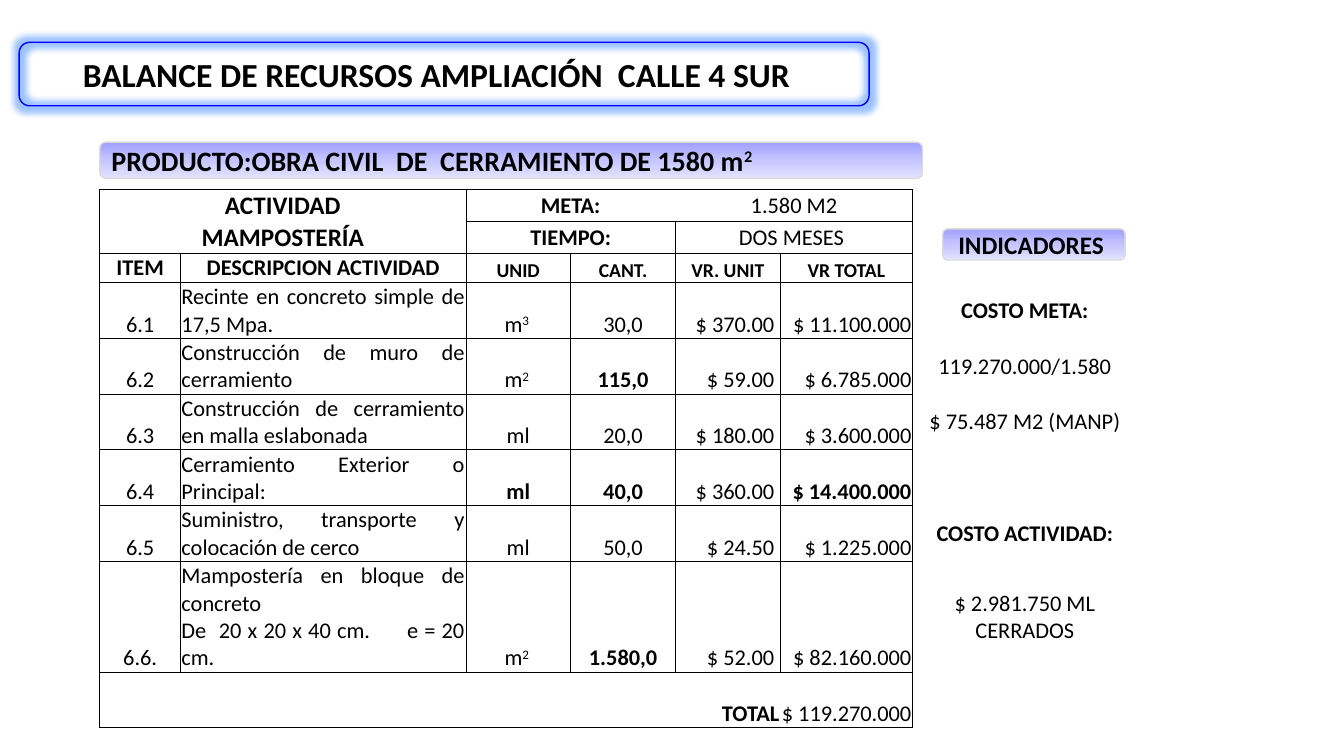
"""Build the resource balance slide with its cost table and indicators."""
import copy
import dataclasses
import typing

import lxml.etree
import pptx
import pptx.dml.color
import pptx.enum.shapes
import pptx.enum.text
import pptx.oxml
import pptx.oxml.ns
import pptx.util

Inches = pptx.util.Inches
Align = pptx.enum.text.PP_ALIGN
Anchor = pptx.enum.text.MSO_ANCHOR
qn = pptx.oxml.ns.qn

COLORS = {"text": "000000", "frame": "0000FF", "glow": "5B9BFF", "banner_line": "DBDBDB",
          "banner_top": "A0A0FF", "banner_middle": "C5C5FF", "banner_bottom": "E3E3FF"}
FONT = "Calibri"
TITLE_BOX = (0.19, 0.42, 8.43, 0.63)
COLUMN_WIDTHS = (0.8, 2.83, 1.04, 1.04, 1.04, 1.31, 2.23)
ROW_HEIGHTS = (0.3, 0.3, 0.29, 0.44, 0.39, 0.4, 0.54, 0.4, 0.55, 0.55)
LAST_ROW = len(ROW_HEIGHTS) - 1
INDICATOR_COLUMN = 6
FIRST_ITEM_ROW = 3


@dataclasses.dataclass
class Cell:
    """Content and format of one table cell."""
    row: int
    column: int
    text: str
    bold: bool = False
    size: float = 16
    align: Align = Align.CENTER
    anchor: Anchor = Anchor.BOTTOM
    superscript: str = ""
    span: int = 1
    open_sides: str = ""


@dataclasses.dataclass
class Item:
    """One priced activity of the budget."""
    number: str
    description: str
    unit: str
    exponent: str
    quantity: str
    unit_price: str
    total: str
    bold_columns: tuple[int, ...] = ()


@dataclasses.dataclass
class Banner:
    """A gradient label."""
    box: tuple[float, float, float, float]
    text: str
    size: float
    align: Align
    superscript: str = ""


BANNERS = (
    Banner((0.99, 1.41, 8.16, 0.36), "PRODUCTO:OBRA CIVIL  DE  CERRAMIENTO DE 1580 m", 20, Align.LEFT, "2"),
    Banner((9.35, 2.27, 1.81, 0.31), "INDICADORES ", 18, Align.CENTER),
)
ITEMS = (
    Item("6.1", "Recinte en concreto simple de 17,5 Mpa. ", "m", "3 ", "30,0", "$ 370.00 ", "$ 11.100.000"),
    Item("6.2", "Construcción de muro de cerramiento ", "m", "2 ", "115,0", "$ 59.00 ", "$ 6.785.000", (3,)),
    Item("6.3", "Construcción de cerramiento en malla eslabonada", "ml", "", "20,0", "$ 180.00 ", "$ 3.600.000"),
    Item("6.4", "Cerramiento Exterior o Principal: ", "ml", "", "40,0", "$ 360.00 ", "$ 14.400.000", (2, 3, 5)),
    Item("6.5", "Suministro, transporte y colocación de cerco ", "ml", "", "50,0", "$ 24.50 ", "$ 1.225.000"),
    Item("6.6.", "Mampostería en bloque de concreto \nDe  20 x 20 x 40 cm.      e = 20 cm.",
         "m", "2 ", "1.580,0", "$ 52.00 ", "$ 82.160.000", (3,)),
)
HEADINGS = ("ITEM", "DESCRIPCION ACTIVIDAD", "UNID", "CANT.", "VR. UNIT", "VR TOTAL")
INDICATORS = {3: "COSTO META:", 4: "119.270.000/1.580", 5: "$ 75.487 M2 (MANP)",
              7: "COSTO ACTIVIDAD:", 8: "$ 2.981.750 ML CERRADOS"}
ITEM_ALIGNS = (Align.CENTER, Align.JUSTIFY, Align.CENTER, Align.CENTER, Align.RIGHT, Align.RIGHT)


def rgb(name: str) -> pptx.dml.color.RGBColor:
    """Return the named colour."""
    return pptx.dml.color.RGBColor.from_string(COLORS[name])


def write(frame: typing.Any, text: str, *, size: float, bold: bool = True,
          align: Align = Align.CENTER, superscript: str = "") -> None:
    """Fill a text frame, one paragraph per line, with an optional raised ending."""
    for index, line in enumerate(text.split("\n")):
        paragraph = frame.add_paragraph() if index else frame.paragraphs[0]
        paragraph.alignment = align
        for part, raised in ((line, False), (superscript, True)):
            if not part:
                continue
            run = paragraph.add_run()
            run.text = part
            run.font.name = FONT
            run.font.size = pptx.util.Pt(size)
            run.font.bold = bold
            run.font.color.rgb = rgb("text")
            if raised:
                run.font._element.set("baseline", "30000")


def add_rounded(slide: typing.Any, box: tuple[float, ...], line_color: str) -> typing.Any:
    """Add a rounded shape with a thin outline."""
    shape = slide.shapes.add_shape(
        pptx.enum.shapes.MSO_SHAPE.FLOWCHART_ALTERNATE_PROCESS, *map(Inches, box))
    shape.shadow.inherit = False
    shape.line.color.rgb = rgb(line_color)
    shape.line.width = pptx.util.Pt(1)
    return shape


def add_title(slide: typing.Any) -> None:
    """Place the title and its glowing frame."""
    frame = add_rounded(slide, TITLE_BOX, "frame")
    frame.fill.background()
    effects = frame._element.spPr.find(qn("a:effectLst"))
    glow = lxml.etree.SubElement(effects, qn("a:glow"), rad="101600")
    color = lxml.etree.SubElement(glow, qn("a:srgbClr"), val=COLORS["glow"])
    lxml.etree.SubElement(color, qn("a:alpha"), val="60000")
    title = slide.shapes.title
    title.left, title.top, title.width, title.height = map(Inches, TITLE_BOX)
    title.text_frame.auto_size = pptx.enum.text.MSO_AUTO_SIZE.NONE
    title.text_frame.vertical_anchor = Anchor.MIDDLE
    write(title.text_frame, "BALANCE DE RECURSOS AMPLIACIÓN  CALLE 4 SUR  ", size=24)


def add_banner(slide: typing.Any, banner: Banner) -> None:
    """Add a label with a three-stop vertical gradient."""
    shape = add_rounded(slide, banner.box, "banner_line")
    shape.fill.gradient()
    shape.fill.gradient_angle = 270
    stop_list = shape._element.spPr.find(".//" + qn("a:gsLst"))
    stop_list.append(copy.deepcopy(stop_list[-1]))
    names = ("banner_top", "banner_middle", "banner_bottom")
    for index, (stop, name) in enumerate(zip(shape.fill.gradient_stops, names)):
        stop.position = index / 2
        stop.color.rgb = rgb(name)
    shape.text_frame.word_wrap = True
    shape.text_frame.vertical_anchor = Anchor.MIDDLE
    write(shape.text_frame, banner.text, size=banner.size, align=banner.align,
          superscript=banner.superscript)


def build_cells() -> list[Cell]:
    """List every filled table cell."""
    cells = [
        Cell(0, 0, "ACTIVIDAD", True, 18, span=2, open_sides="B"),
        Cell(0, 2, "META:", True, anchor=Anchor.MIDDLE, span=2, open_sides="R"),
        Cell(0, 4, "1.580 M2", anchor=Anchor.MIDDLE, span=2, open_sides="L"),
        Cell(1, 0, "MAMPOSTERÍA", True, 18, anchor=Anchor.MIDDLE, span=2, open_sides="T"),
        Cell(1, 2, "TIEMPO:", True, anchor=Anchor.MIDDLE, span=2),
        Cell(1, 4, "DOS MESES ", anchor=Anchor.MIDDLE, span=2),
        Cell(LAST_ROW, 0, "TOTAL", True, align=Align.RIGHT, span=5, open_sides="R"),
        Cell(LAST_ROW, 5, "$ 119.270.000", align=Align.RIGHT, open_sides="L"),
    ]
    for column, heading in enumerate(HEADINGS):
        wide = column < 2
        cells.append(Cell(2, column, heading, True, 16 if wide else 14,
                          anchor=Anchor.MIDDLE if wide else Anchor.BOTTOM))
    for row, item in enumerate(ITEMS, FIRST_ITEM_ROW):
        texts = (item.number, item.description, item.unit, item.quantity, item.unit_price, item.total)
        for column, text in enumerate(texts):
            cells.append(Cell(row, column, text, column in item.bold_columns, align=ITEM_ALIGNS[column],
                              anchor=Anchor.MIDDLE if column == 1 else Anchor.BOTTOM,
                              superscript=item.exponent if column == 2 else ""))
    for row in range(len(ROW_HEIGHTS)):
        text = INDICATORS.get(row, "")
        cells.append(Cell(row, INDICATOR_COLUMN, text, text.startswith("COSTO"),
                          anchor=Anchor.MIDDLE, open_sides="RTB"))
    return cells


def set_borders(table_cell: typing.Any, cell: Cell, column: int) -> None:
    """Draw the sides of a grid cell, heavier around the budget, and clear its fill."""
    last = cell.column + cell.span - 1
    heavy = {"L": cell.column in (0, INDICATOR_COLUMN), "R": last == INDICATOR_COLUMN - 1,
             "T": cell.row == 0, "B": cell.row == LAST_ROW}
    properties = table_cell._tc.get_or_add_tcPr()
    for side, is_heavy in heavy.items():
        inner = column > cell.column and (side == "L" or side == "R" and column < last)
        line = lxml.etree.SubElement(properties, qn(f"a:ln{side}"), w="12700" if is_heavy else "6350")
        if inner or side in cell.open_sides:
            lxml.etree.SubElement(line, qn("a:noFill"))
        else:
            fill = lxml.etree.SubElement(line, qn("a:solidFill"))
            lxml.etree.SubElement(fill, qn("a:srgbClr"), val=COLORS["text"])
    table_cell.fill.background()


def add_budget(slide: typing.Any) -> None:
    """Add the budget table."""
    table = slide.shapes.add_table(len(ROW_HEIGHTS), len(COLUMN_WIDTHS), Inches(0.99), Inches(1.88),
                                   Inches(sum(COLUMN_WIDTHS)), Inches(sum(ROW_HEIGHTS))).table
    table.first_row = table.horz_banding = False
    for column, width in zip(table.columns, COLUMN_WIDTHS):
        column.width = Inches(width)
    for row, height in zip(table.rows, ROW_HEIGHTS):
        row.height = Inches(height)
    for cell in build_cells():
        for column in range(cell.column, cell.column + cell.span):
            part = table.cell(cell.row, column)
            part.margin_left = part.margin_top = part.margin_right = Inches(0.01)
            part.margin_bottom = 0
            part.vertical_anchor = cell.anchor
            set_borders(part, cell, column)
            if column > cell.column or not cell.text:
                part.text_frame.paragraphs[0]._p.get_or_add_endParaRPr().set("sz", "1400")
        origin = table.cell(cell.row, cell.column)
        if cell.span > 1:
            origin.merge(table.cell(cell.row, cell.column + cell.span - 1))
        if cell.text:
            write(origin.text_frame, cell.text, size=cell.size, bold=cell.bold,
                  align=cell.align, superscript=cell.superscript)


def main() -> None:
    """Build and save the presentation."""
    presentation = pptx.Presentation()
    presentation.slide_width, presentation.slide_height = Inches(13.33), Inches(7.5)
    slide = presentation.slides.add_slide(presentation.slide_layouts[5])
    add_budget(slide)
    for banner in BANNERS:
        add_banner(slide, banner)
    add_title(slide)
    presentation.save("out.pptx")


if __name__ == "__main__":
    main()
